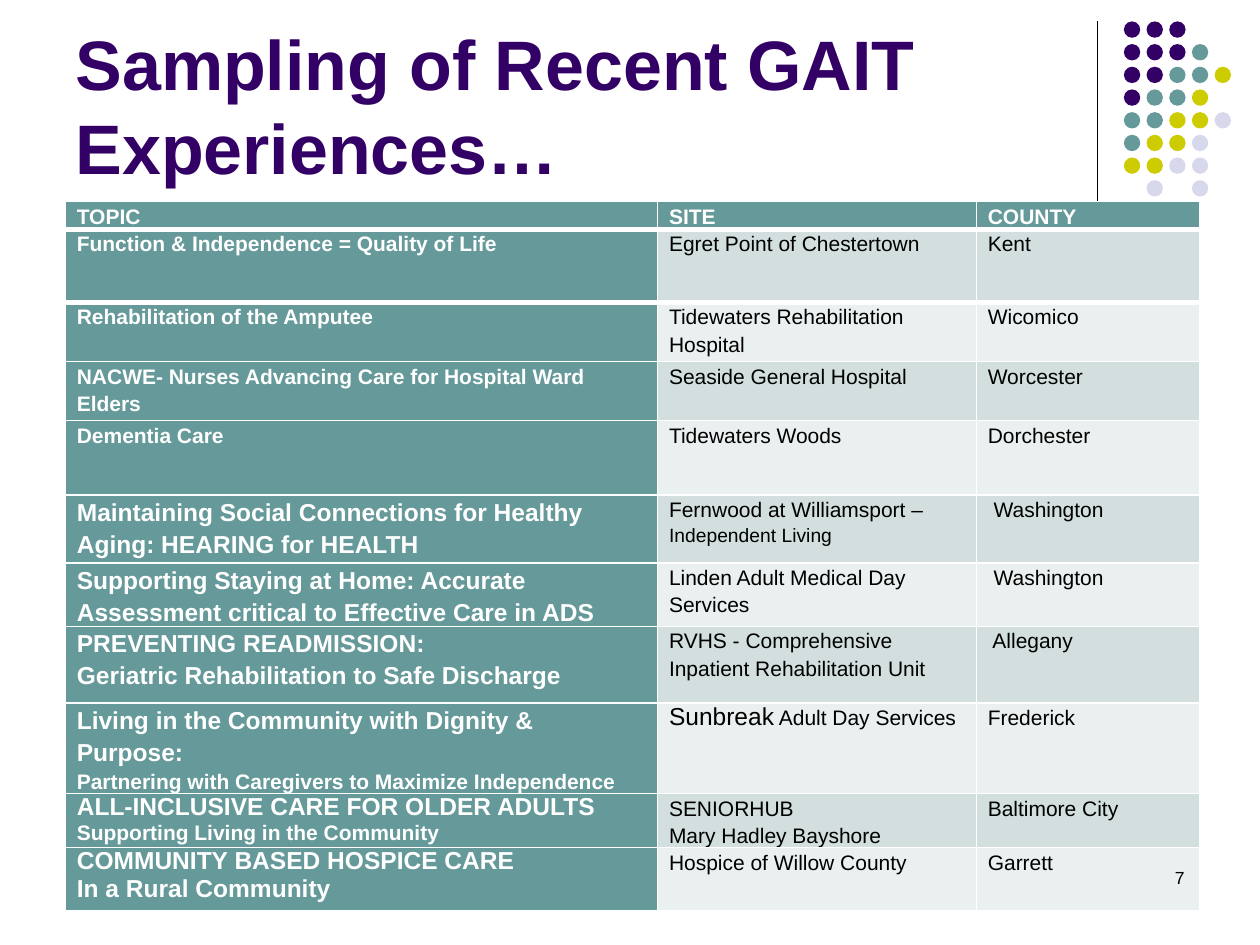
from lxml import etree
from pptx import Presentation
from pptx.dml.color import RGBColor
from pptx.enum import shapes, text
from pptx.oxml.ns import qn
from pptx.util import Inches, Pt

COLOURS = {"purple": "330066", "teal": "669999", "lime": "CCCC00", "lilac": "D8D8EC",
           "band": "D3DEDE", "pale": "EAEFEF", "black": "000000", "white": "FFFFFF"}
DOT_COLOURS = {"P": "purple", "T": "teal", "L": "lime", "V": "lilac"}
DOT_ROWS = ["PPP", "PPPT", "PPTTL", "PTTL", "TTLLV", "TLLV", "LLVV", " V V"]

COLUMN_WIDTHS = [4.7, 2.53, 1.77]
ROW_HEIGHTS = [0.22, 0.58, 0.47, 0.47, 0.59, 0.54, 0.5, 0.61, 0.5, 0.42, 0.5]

# A cell is a string, or a list of paragraphs; a paragraph is a list of (text, size).
TABLE_ROWS = [
    ["TOPIC", "SITE", "COUNTY"],
    ["Function & Independence = Quality of Life", "Egret Point of Chestertown", "Kent"],
    ["Rehabilitation of the Amputee", "Tidewaters Rehabilitation Hospital", "Wicomico"],
    ["NACWE- Nurses Advancing Care for Hospital Ward Elders",
     "Seaside General Hospital", "Worcester"],
    ["Dementia Care", "Tidewaters Woods", "Dorchester"],
    [[[("Maintaining Social Connections for Healthy Aging: HEARING for HEALTH", 14)]],
     [[("Fernwood at Williamsport – ", 12), ("Independent Living", 11)]], " Washington"],
    [[[("Supporting Staying at Home: Accurate Assessment critical to Effective Care in ADS", 14)]],
     "Linden Adult Medical Day Services", " Washington"],
    [[[("PREVENTING READMISSION:", 14)], [("Geriatric Rehabilitation to Safe Discharge", 14)]],
     "RVHS - Comprehensive Inpatient Rehabilitation Unit", " Allegany"],
    [[[("Living in the Community with Dignity & Purpose:", 14)],
      [("Partnering with Caregivers to Maximize Independence", 12)]],
     [[("Sunbreak", 14), (" Adult Day Services", 12)]], "Frederick"],
    [[[("ALL-INCLUSIVE CARE FOR OLDER ADULTS", 14)],
      [("Supporting Living in the Community", 12)]],
     [[("SENIORHUB", 12)], [("Mary Hadley Bayshore", 12)]], "Baltimore City"],
    [[[("COMMUNITY BASED HOSPICE CARE", 14)], [("In a Rural Community", 14)]],
     "Hospice of Willow County", "Garrett"],
]
SINGLE_SPACED = {(8, 1), (9, 0), (10, 0)}  # (row, column)


class SlideBuilder:
    font = "Arial"

    def __init__(self, page):
        self.page = page

    def colour(self, name):
        return RGBColor.from_string(COLOURS[name])

    def style(self, span, size, colour, bold=False):
        span.font.name = self.font
        span.font.size = Pt(size)
        span.font.bold = bold
        span.font.color.rgb = self.colour(colour)

    def title(self, words, left, top, width, height):
        box = self.page.shapes.title
        box.left, box.top = Inches(left), Inches(top)
        box.width, box.height = Inches(width), Inches(height)
        frame = box.text_frame
        frame.text = words
        frame.auto_size = text.MSO_AUTO_SIZE.NONE
        frame.vertical_anchor = text.MSO_ANCHOR.BOTTOM
        para = frame.paragraphs[0]
        para.alignment = text.PP_ALIGN.LEFT
        self.style(para.runs[0], 40, "purple", bold=True)

    def line(self, x1, y1, x2, y2):
        rule = self.page.shapes.add_connector(
            shapes.MSO_CONNECTOR.STRAIGHT, Inches(x1), Inches(y1), Inches(x2), Inches(y2))
        rule.line.color.rgb = self.colour("black")
        rule.line.width = Pt(0.75)
        etree.SubElement(rule._element.spPr, qn("a:effectLst"))

    def dot(self, left, top, size, colour):
        dot = self.page.shapes.add_shape(
            shapes.MSO_SHAPE.OVAL, Inches(left), Inches(top), Inches(size), Inches(size))
        dot.shadow.inherit = False
        dot.fill.solid()
        dot.fill.fore_color.rgb = self.colour(colour)
        dot.line.fill.background()

    def cell(self, cell, content, fill, colour, bold, spacing):
        cell.fill.solid()
        cell.fill.fore_color.rgb = self.colour(fill)
        cell.margin_left = cell.margin_right = Inches(0.09)
        cell.margin_top = cell.margin_bottom = 0
        paragraphs = [[(content, 12)]] if isinstance(content, str) else content
        frame = cell.text_frame
        for index, spans in enumerate(paragraphs):
            para = frame.add_paragraph() if index else frame.paragraphs[0]
            para.line_spacing = spacing
            for words, size in spans:
                span = para.add_run()
                span.text = words
                self.style(span, size, colour, bold)

    def border(self, cell, side, points):
        properties = cell._tc.get_or_add_tcPr()
        edge = etree.Element(qn("a:" + side), w=str(Pt(points)))
        fill = etree.SubElement(edge, qn("a:solidFill"))
        etree.SubElement(fill, qn("a:srgbClr"), val=COLOURS["white"])
        properties.insert(0, edge)

    def table(self, rows, left, top):
        frame = self.page.shapes.add_table(
            len(rows), len(COLUMN_WIDTHS), Inches(left), Inches(top),
            Inches(sum(COLUMN_WIDTHS)), Inches(sum(ROW_HEIGHTS)))
        table = frame.table
        table.first_col = True
        table.horz_banding = False
        for column, width in zip(table.columns, COLUMN_WIDTHS):
            column.width = Inches(width)
        for r, contents in enumerate(rows):
            table.rows[r].height = Inches(ROW_HEIGHTS[r])
            for c, content in enumerate(contents):
                heading = r == 0 or c == 0
                fill = "teal" if heading else ("band" if r % 2 else "pale")
                spacing = 1.0 if (r, c) in SINGLE_SPACED else 1.15
                self.cell(table.cell(r, c), content, fill,
                          "white" if heading else "black", heading, spacing)
                # Thick rule under the header row
                if r == 0:
                    self.border(table.cell(r, c), "lnB", 3)
                elif r == 1:
                    self.border(table.cell(r, c), "lnT", 3)

    def page_number(self, words, left, top, width, height):
        box = self.page.shapes.add_textbox(
            Inches(left), Inches(top), Inches(width), Inches(height))
        frame = box.text_frame
        frame.word_wrap = True
        frame.text = words
        para = frame.paragraphs[0]
        para.alignment = text.PP_ALIGN.RIGHT
        self.style(para.runs[0], 10, "black")


def main():
    deck = Presentation()
    deck.slide_width, deck.slide_height = Inches(10), Inches(7.5)
    builder = SlideBuilder(deck.slides.add_slide(deck.slide_layouts[5]))

    # Corner decoration: a rule and a grid of dots
    builder.line(8.71, 0.17, 8.71, 1.83)
    pitch = 0.18
    for r, row in enumerate(DOT_ROWS):
        for c, key in enumerate(row):
            if key in DOT_COLOURS:
                builder.dot(8.92 + c * pitch, 0.17 + r * pitch, 0.13, DOT_COLOURS[key])

    # Title, table and page number
    builder.title("Sampling of Recent GAIT Experiences…", 0.5, 0.13, 8.25, 1.42)
    builder.table(TABLE_ROWS, 0.52, 1.6)
    builder.page_number("7", 7.17, 6.83, 2.33, 0.5)

    deck.save("out.pptx")


if __name__ == "__main__":
    main()
